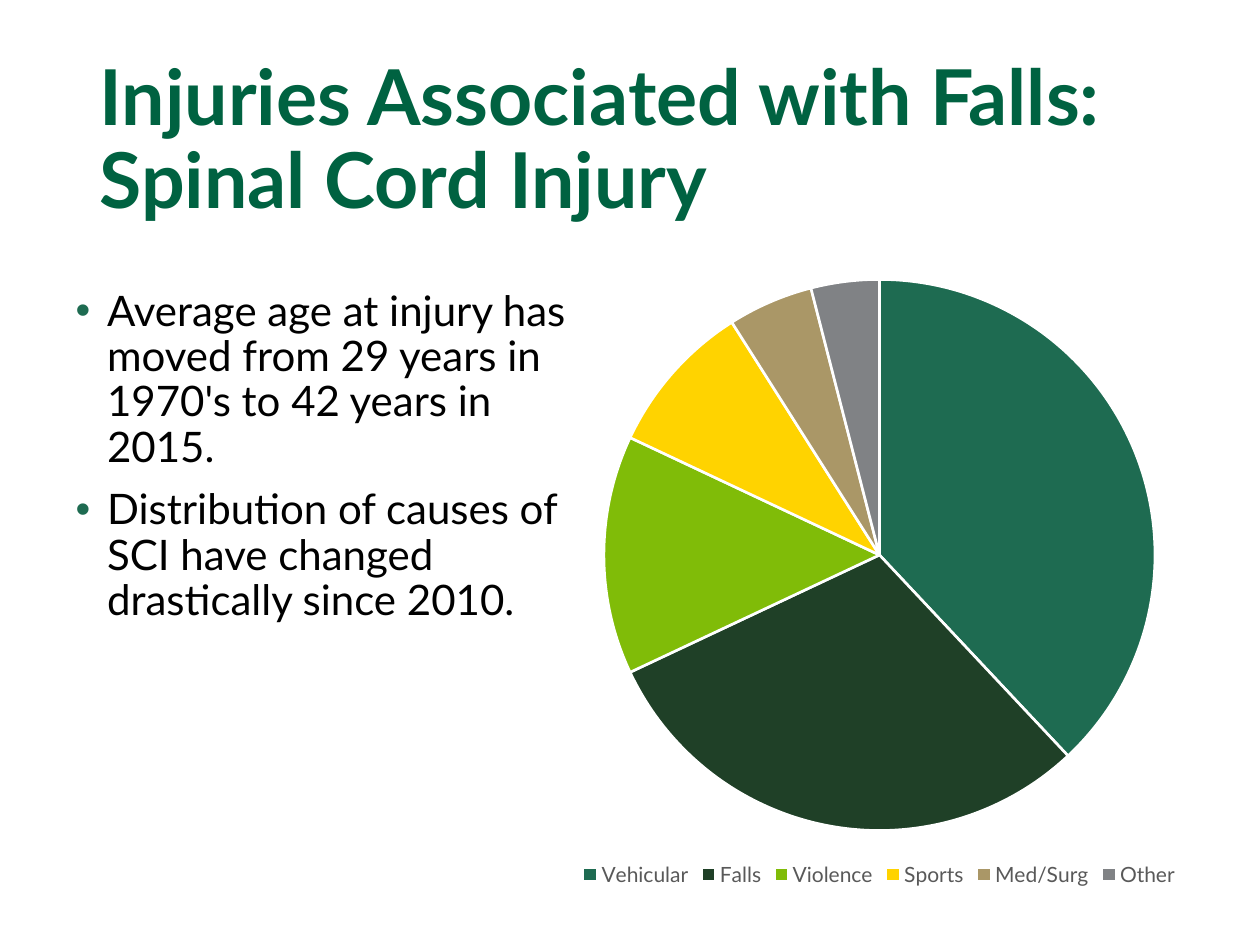
from dataclasses import dataclass

import lxml.etree
import pptx
import pptx.chart.data
import pptx.dml.color
import pptx.enum.chart
import pptx.enum.text
import pptx.oxml.ns
import pptx.util
from pptx.util import Inches


@dataclass(frozen=True)
class Theme:
    font: str = "Lato"
    title_color: str = "006241"
    text_color: str = "000000"
    bullet_color: str = "1E6B51"
    legend_color: str = "595959"
    border_color: str = "FFFFFF"
    title_size: int = 44
    body_size: int = 24
    legend_size: int = 12
    chart_size: int = 10
    border_width: float = 1.5
    line_spacing: float = 0.9
    bullet_space: int = 10


THEME = Theme()

TITLE_LINES = ["Injuries Associated with Falls:", "Spinal Cord Injury"]
BULLETS = [
    "Average age at injury has moved from 29 years in 1970's to 42 years in 2015.",
    "Distribution of causes of SCI have changed drastically since 2010.",
]
CAUSES = [
    ("Vehicular", 38, "1E6B51"),
    ("Falls", 30, "1F4027"),
    ("Violence", 14, "80BC08"),
    ("Sports", 9, "FFD300"),
    ("Med/Surg", 5, "AA9767"),
    ("Other", 4, "808285"),
]


def rgb(color):
    return pptx.dml.color.RGBColor.from_string(color)


def style_font(font, size, color, bold=False):
    font.name = THEME.font
    font.size = pptx.util.Pt(size)
    font.bold = bold
    font.color.rgb = rgb(color)


def place(shape, box):
    shape.left, shape.top, shape.width, shape.height = box


def add_bullet(para, indent):
    properties = para._p.get_or_add_pPr()
    properties.set("marL", str(indent))
    properties.set("indent", str(-indent))
    qn = pptx.oxml.ns.qn
    color = lxml.etree.SubElement(properties, qn("a:buClr"))
    lxml.etree.SubElement(color, qn("a:srgbClr"), val=THEME.bullet_color)
    lxml.etree.SubElement(properties, qn("a:buFont"), typeface="Arial")
    lxml.etree.SubElement(properties, qn("a:buChar"), char="•")


def fill_title(page, box):
    title = page.shapes.title
    place(title, box)
    frame = title.text_frame
    frame.auto_size = pptx.enum.text.MSO_AUTO_SIZE.NONE
    frame.vertical_anchor = pptx.enum.text.MSO_ANCHOR.MIDDLE
    para = frame.paragraphs[0]
    para.alignment = pptx.enum.text.PP_ALIGN.LEFT
    para.line_spacing = THEME.line_spacing
    for index, line in enumerate(TITLE_LINES):
        if index:
            para.add_line_break()
        para.add_run().text = line
    style_font(para.font, THEME.title_size, THEME.title_color, bold=True)


def fill_body(page, box):
    body = page.placeholders[1]
    place(body, box)
    frame = body.text_frame
    frame.auto_size = pptx.enum.text.MSO_AUTO_SIZE.NONE
    for index, text in enumerate(BULLETS):
        para = frame.add_paragraph() if index else frame.paragraphs[0]
        para.text = text
        para.line_spacing = THEME.line_spacing
        para.space_before = pptx.util.Pt(THEME.bullet_space)
        add_bullet(para, Inches(0.25))
        style_font(para.font, THEME.body_size, THEME.text_color)


def add_causes_chart(page, box):
    names, values, colors = zip(*CAUSES)
    data = pptx.chart.data.CategoryChartData()
    data.categories = names
    data.add_series("Series 1", values)
    chart = page.shapes.add_chart(
        pptx.enum.chart.XL_CHART_TYPE.PIE, *box, data
    ).chart
    style_font(chart.font, THEME.chart_size, THEME.text_color)
    chart.has_title = False
    chart.has_legend = True
    chart.legend.position = pptx.enum.chart.XL_LEGEND_POSITION.BOTTOM
    chart.legend.include_in_layout = False
    style_font(chart.legend.font, THEME.legend_size, THEME.legend_color)

    plot = chart.plots[0]
    plot.vary_by_categories = True
    for index, color in enumerate(colors):
        slice_format = plot.series[0].points[index].format
        slice_format.fill.solid()
        slice_format.fill.fore_color.rgb = rgb(color)
        slice_format.line.color.rgb = rgb(THEME.border_color)
        slice_format.line.width = pptx.util.Pt(THEME.border_width)


def main():
    deck = pptx.Presentation()
    deck.slide_width, deck.slide_height = Inches(10), Inches(7.5)
    page = deck.slides.add_slide(deck.slide_layouts[1])
    fill_title(page, (Inches(0.69), Inches(0.4), Inches(8.62), Inches(1.45)))
    fill_body(page, (Inches(0.5), Inches(2.25), Inches(4.42), Inches(4.45)))
    add_causes_chart(page, (Inches(3.25), Inches(2.08), Inches(7.46), Inches(5)))
    deck.save("out.pptx")


if __name__ == "__main__":
    main()
